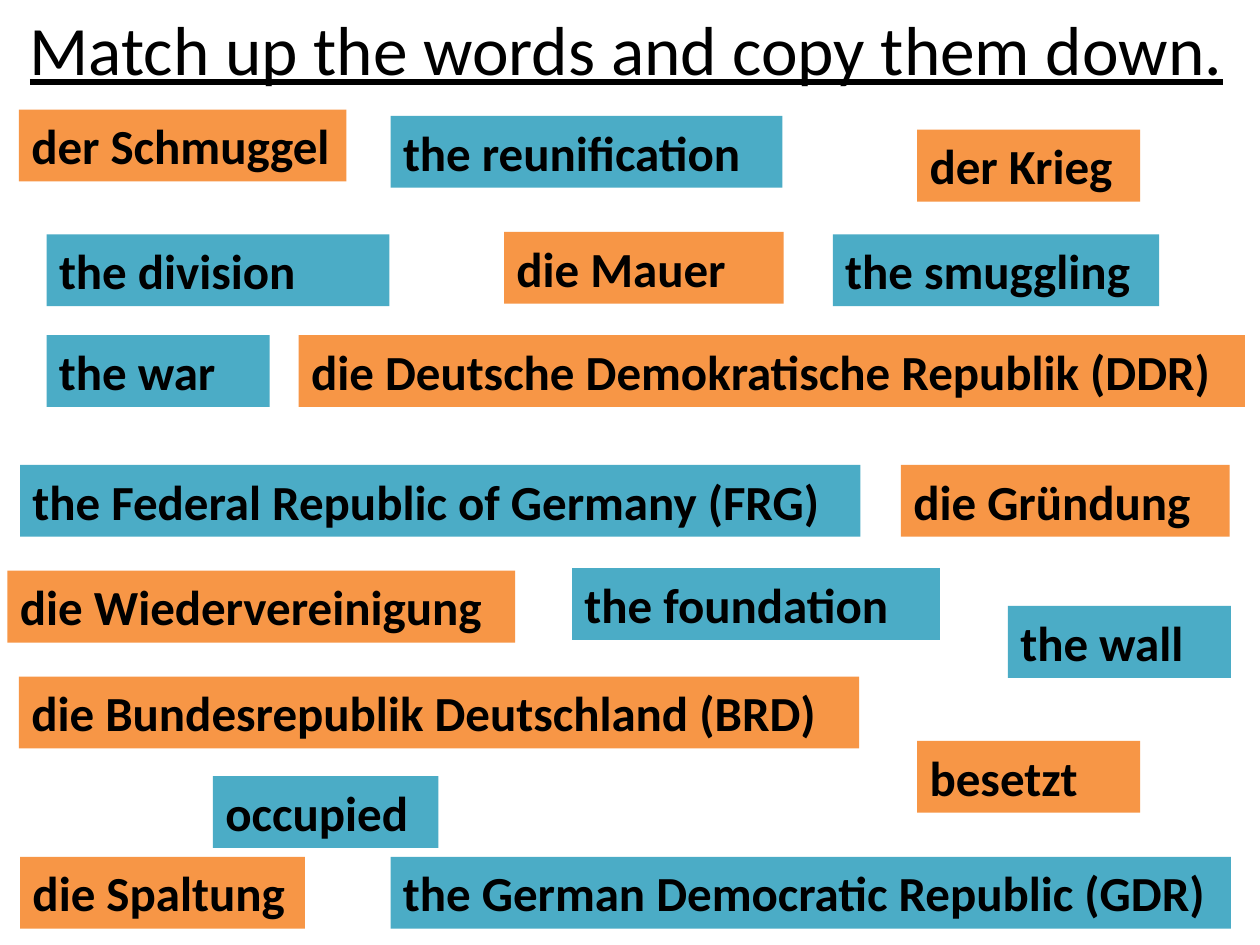
from typing import NamedTuple

from pptx import Presentation
from pptx import util as u
from pptx.dml.color import RGBColor
from pptx.enum import shapes, text

COLOURS = {"german": "F79646", "english": "4BACC6", "ink": "000000"}
FONT = "Calibri"
CARD_HEIGHT = 0.57


class Card(NamedTuple):
    language: str
    wording: str
    left: float
    top: float
    width: float


CARDS = [
    Card("german", "der Schmuggel", 0.15, 0.87, 2.6),
    Card("english", "the reunification", 3.1, 0.92, 3.11),
    Card("german", "der Krieg", 7.28, 1.03, 1.77),
    Card("english", "the division", 0.37, 1.86, 2.72),
    Card("german", "die Mauer", 4, 1.84, 2.22),
    Card("english", "the smuggling", 6.61, 1.86, 2.59),
    Card("english", "the war", 0.37, 2.66, 1.77),
    Card("german", "die Deutsche Demokratische Republik (DDR)", 2.37, 2.66, 7.51),
    Card("english", "the Federal Republic of Germany (FRG)", 0.16, 3.69, 6.67),
    Card("german", "die Gründung", 7.15, 3.69, 2.61),
    Card("german", "die Wiedervereinigung", 0.06, 4.53, 4.03),
    Card("english", "the foundation", 4.54, 4.51, 2.92),
    Card("english", "the wall", 8, 4.81, 1.77),
    Card("german", "die Bundesrepublik Deutschland (BRD)", 0.15, 5.37, 6.67),
    Card("german", "besetzt", 7.28, 5.88, 1.77),
    Card("english", "occupied", 1.69, 6.16, 1.79),
    Card("german", "die Spaltung", 0.16, 6.8, 2.26),
    Card("english", "the German Democratic Republic (GDR)", 3.1, 6.8, 6.67),
]


def write(shape, wording: str, *, size: float, bold: bool = False,
          underline: bool = False, align=text.PP_ALIGN.LEFT,
          anchor=text.MSO_ANCHOR.TOP) -> None:
    frame = shape.text_frame
    frame.word_wrap = True
    frame.vertical_anchor = anchor
    paragraph = frame.paragraphs[0]
    paragraph.alignment = align
    run = paragraph.add_run()
    run.text = wording
    run.font.name = FONT
    run.font.size = u.Pt(size)
    run.font.bold = bold
    run.font.underline = underline
    run.font.color.rgb = RGBColor.from_string(COLOURS["ink"])


def draw_card(slide, card: Card) -> None:
    box = slide.shapes.add_shape(
        shapes.MSO_SHAPE.RECTANGLE, u.Inches(card.left), u.Inches(card.top),
        u.Inches(card.width), u.Inches(CARD_HEIGHT))
    box.shadow.inherit = False
    box.fill.solid()
    box.fill.fore_color.rgb = RGBColor.from_string(COLOURS[card.language])
    box.line.fill.background()
    write(box, card.wording, size=28, bold=True)
    box.text_frame.auto_size = text.MSO_AUTO_SIZE.SHAPE_TO_FIT_TEXT


def main() -> None:
    deck = Presentation()
    deck.slide_width, deck.slide_height = u.Inches(10), u.Inches(7.5)
    slide = deck.slides.add_slide(deck.slide_layouts[6])

    heading = slide.shapes.add_textbox(
        u.Inches(0.06), u.Inches(-0.25), u.Inches(9.82), u.Inches(1.25))
    write(heading, "Match up the words and copy them down.", size=39.6,
          underline=True, align=text.PP_ALIGN.CENTER,
          anchor=text.MSO_ANCHOR.MIDDLE)

    for card in CARDS:
        draw_card(slide, card)

    deck.save("out.pptx")


if __name__ == "__main__":
    main()
